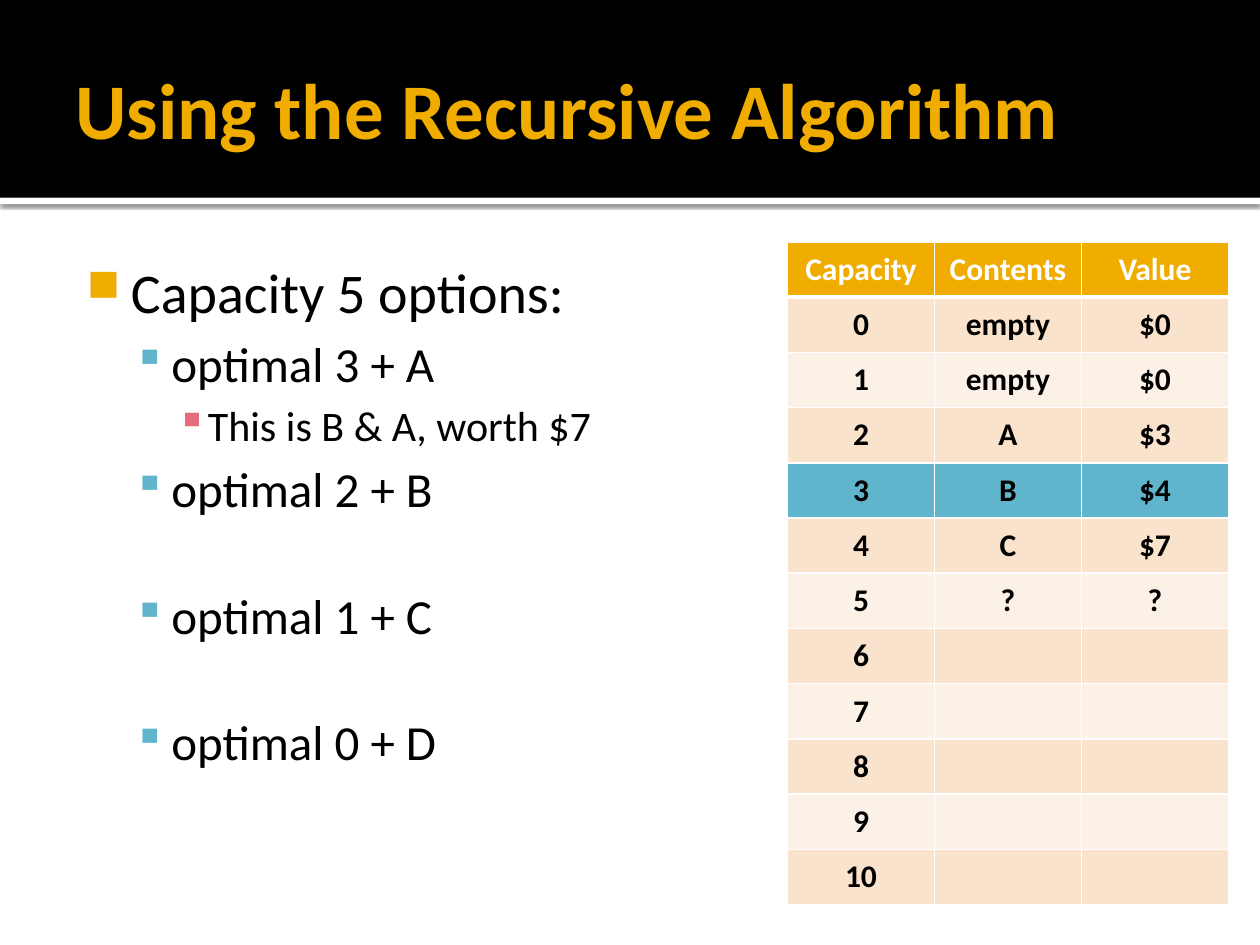
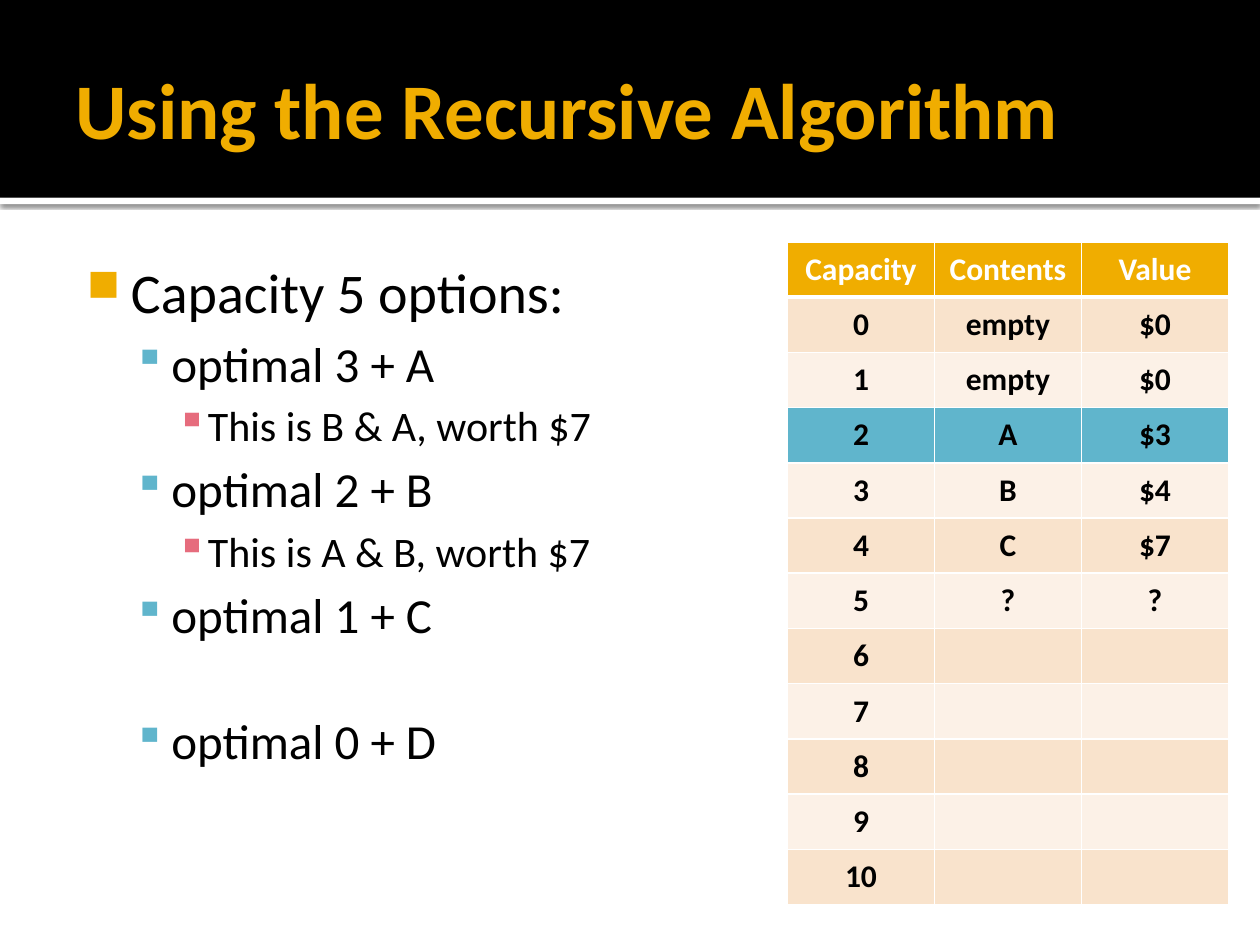
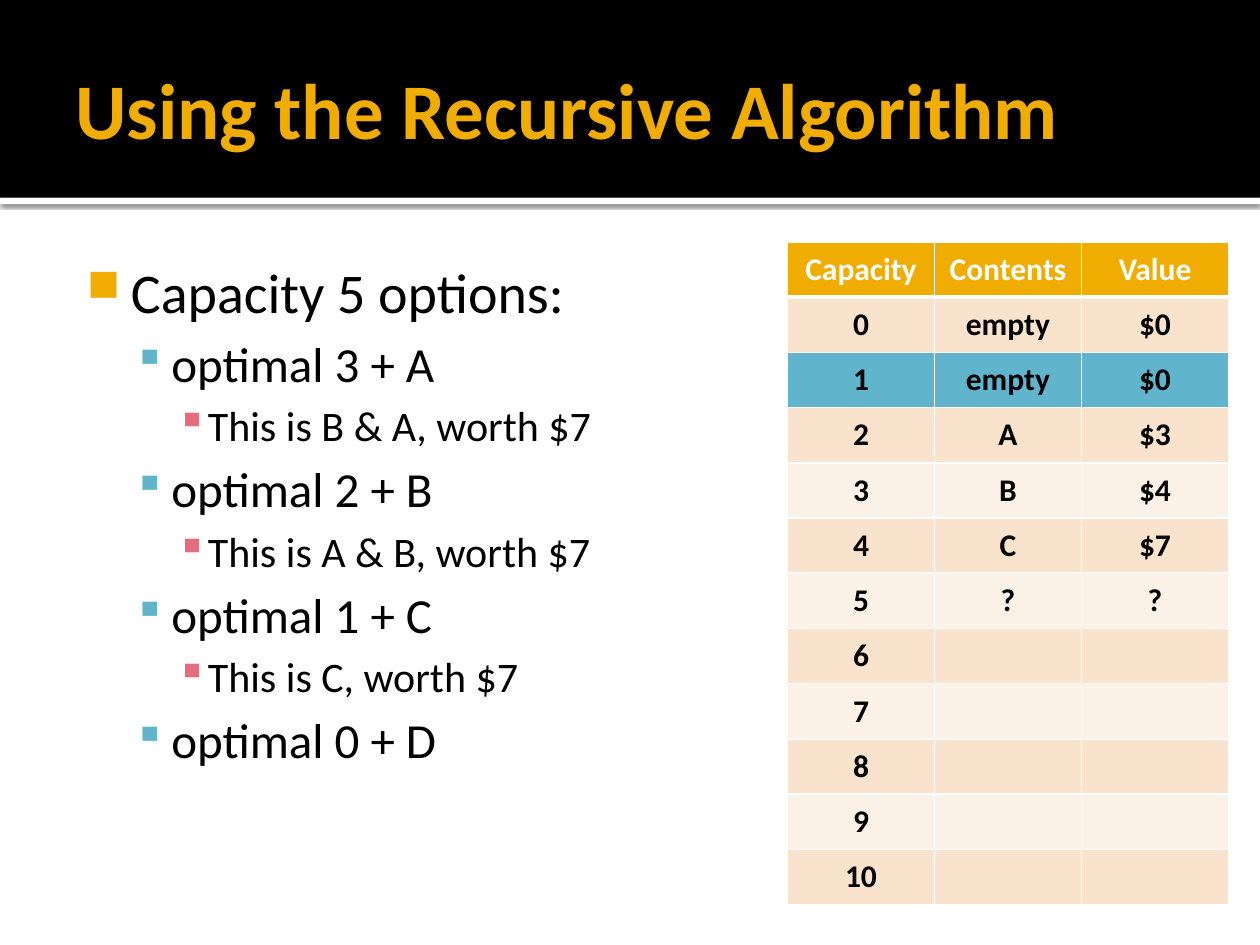
import lxml.etree
import pptx
import pptx.dml.color
import pptx.enum.shapes
import pptx.enum.text
import pptx.oxml.ns
import pptx.util

Inches = pptx.util.Inches
Pt = pptx.util.Pt
qn = pptx.oxml.ns.qn
ANCHOR = pptx.enum.text.MSO_ANCHOR
ALIGN = pptx.enum.text.PP_ALIGN

FONT = "Calibri"
LINE_HEIGHT = 1.22
SPACING = 0.18
COLORS = {
    "black": "000000",
    "white": "FFFFFF",
    "gold": "F0AD00",
    "blue": "60B5CC",
    "pink": "E66C7D",
    "band_dark": "F9E3CC",
    "band_light": "FCF1E7",
}
LEVELS = [
    {"size": 32, "left": 0.48, "hang": 0.35, "char": "■", "color": "gold", "pct": 80},
    {"size": 28, "left": 0.8, "hang": 0.3, "char": "▪", "color": "blue", "pct": 90},
    {"size": 24, "left": 1.09, "hang": 0.25, "char": "▪", "color": "pink", "pct": 100},
]

TITLE = "Using the Recursive Algorithm"
HEADING = "Capacity 5 options:"
OPTIONS = ["optimal 3 + A", "optimal 2 + B", "optimal 1 + C", "optimal 0 + D"]
RESULTS = ["This is B & A, worth $7", "This is A & B, worth $7", "This is C, worth $7"]
HEADERS = ["Capacity", "Contents", "Value"]
KNOWN = [("empty", "$0"), ("empty", "$0"), ("A", "$3"), ("B", "$4"), ("C", "$7"), ("?", "?")]
MAX_CAPACITY = 10
STEPS = [(1, 3), (2, 2), (3, 1)]


def rgb(name):
    return pptx.dml.color.RGBColor.from_string(COLORS[name])


def sub(parent, tag, **attrs):
    return lxml.etree.SubElement(parent, qn(tag), {k: str(v) for k, v in attrs.items()})


def add_text(p, text, size=18, color="black", bold=False, align=None):
    p.alignment = align
    r = p.add_run()
    r.text = text
    r.font.name = FONT
    r.font.size = Pt(size)
    r.font.bold = bold
    r.font.color.rgb = rgb(color)


def add_box(slide, box, margins, anchor=ANCHOR.TOP):
    tf = slide.shapes.add_textbox(*map(Inches, box)).text_frame
    tf.word_wrap = True
    tf.vertical_anchor = anchor
    tf.margin_left, tf.margin_top, tf.margin_right, tf.margin_bottom = map(Inches, margins)
    return tf


def add_rect(slide, box, color):
    sp = slide.shapes.add_shape(
        pptx.enum.shapes.MSO_SHAPE.RECTANGLE, *map(Inches, box))
    sp.shadow.inherit = False
    sp.fill.solid()
    sp.fill.fore_color.rgb = rgb(color)
    sp.line.fill.background()
    return sp


def add_shadow(sp):
    effects = sp._element.spPr.find(qn("a:effectLst"))
    shadow = sub(effects, "a:outerShdw", blurRad=Pt(2.5), dist=Pt(0.8),
                 dir=90 * 60000, algn="tl", rotWithShape=0)
    clr = sub(shadow, "a:srgbClr", val=COLORS["black"])
    sub(clr, "a:alpha", val=60000)


def add_header(slide, box):
    left, top, width, height = box
    add_shadow(add_rect(slide, (left, top + height, width, 0.05), "white"))
    add_rect(slide, box, "black")
    tf = add_box(slide, (left + 0.5, top + 0.17, width - 1, height - 0.2),
                 (0.1, 0.05, 0.05, 0.05), ANCHOR.MIDDLE)
    add_text(tf.paragraphs[0], TITLE, size=45, color="gold", bold=True)


def add_bullet(p, text, level, before):
    style = LEVELS[level]
    p.level = level
    p.space_before = Pt(before)
    pPr = p._p.get_or_add_pPr()
    pPr.set("marL", str(Inches(style["left"])))
    pPr.set("indent", str(-Inches(style["hang"])))
    clr = sub(pPr, "a:buClr")
    sub(clr, "a:srgbClr", val=COLORS[style["color"]])
    sub(pPr, "a:buSzPct", val=style["pct"] * 1000)
    sub(pPr, "a:buChar", char=style["char"])
    add_text(p, text, size=style["size"])


def add_options(slide, box, shown):
    tf = add_box(slide, box, (0.06, 0.1, 0.1, 0.05))
    add_bullet(tf.paragraphs[0], HEADING, 0, 0)
    option_gap, result_gap = (LEVELS[i]["size"] * SPACING for i in (1, 2))
    result_height = LEVELS[2]["size"] * LINE_HEIGHT + result_gap
    for i, option in enumerate(OPTIONS):
        skipped = result_height if i > shown else 0
        add_bullet(tf.add_paragraph(), option, 1, option_gap + skipped)
        if i < shown:
            add_bullet(tf.add_paragraph(), RESULTS[i], 2, result_gap)


def add_borders(cell, bottom):
    tcPr = cell._tc.get_or_add_tcPr()
    for side, width in zip("LRTB", (1, 1, 1, bottom)):
        ln = sub(tcPr, f"a:ln{side}", w=Pt(width))
        sub(sub(ln, "a:solidFill"), "a:srgbClr", val=COLORS["white"])


def row_color(row, highlight):
    if row == 0:
        return "gold"
    if row - 1 == highlight:
        return "blue"
    return "band_dark" if row % 2 else "band_light"


def add_capacity_table(slide, box, highlight):
    rows = [HEADERS]
    for capacity in range(MAX_CAPACITY + 1):
        known = KNOWN[capacity] if capacity < len(KNOWN) else ("", "")
        rows.append([str(capacity), *known])
    table = slide.shapes.add_table(len(rows), len(HEADERS), *map(Inches, box)).table
    for i, row in enumerate(rows):
        for j, text in enumerate(row):
            cell = table.cell(i, j)
            cell.vertical_anchor = ANCHOR.MIDDLE
            add_borders(cell, 1 if i else 3)
            cell.fill.solid()
            cell.fill.fore_color.rgb = rgb(row_color(i, highlight))
            if text:
                add_text(cell.text_frame.paragraphs[0], text, bold=True,
                         color="black" if i else "white", align=ALIGN.CENTER)


def add_step_slide(prs, shown, highlight):
    slide = prs.slides.add_slide(prs.slide_layouts[6])
    add_header(slide, (0, 0, 10, 1.57))
    add_options(slide, (0.5, 1.94, 5.67, 5.06), shown)
    add_capacity_table(slide, (6.25, 1.92, 3.5, 5.26), highlight)


def main():
    prs = pptx.Presentation()
    prs.slide_width = Inches(10)
    prs.slide_height = Inches(7.5)
    for shown, highlight in STEPS:
        add_step_slide(prs, shown, highlight)
    prs.save("out.pptx")


if __name__ == "__main__":
    main()
